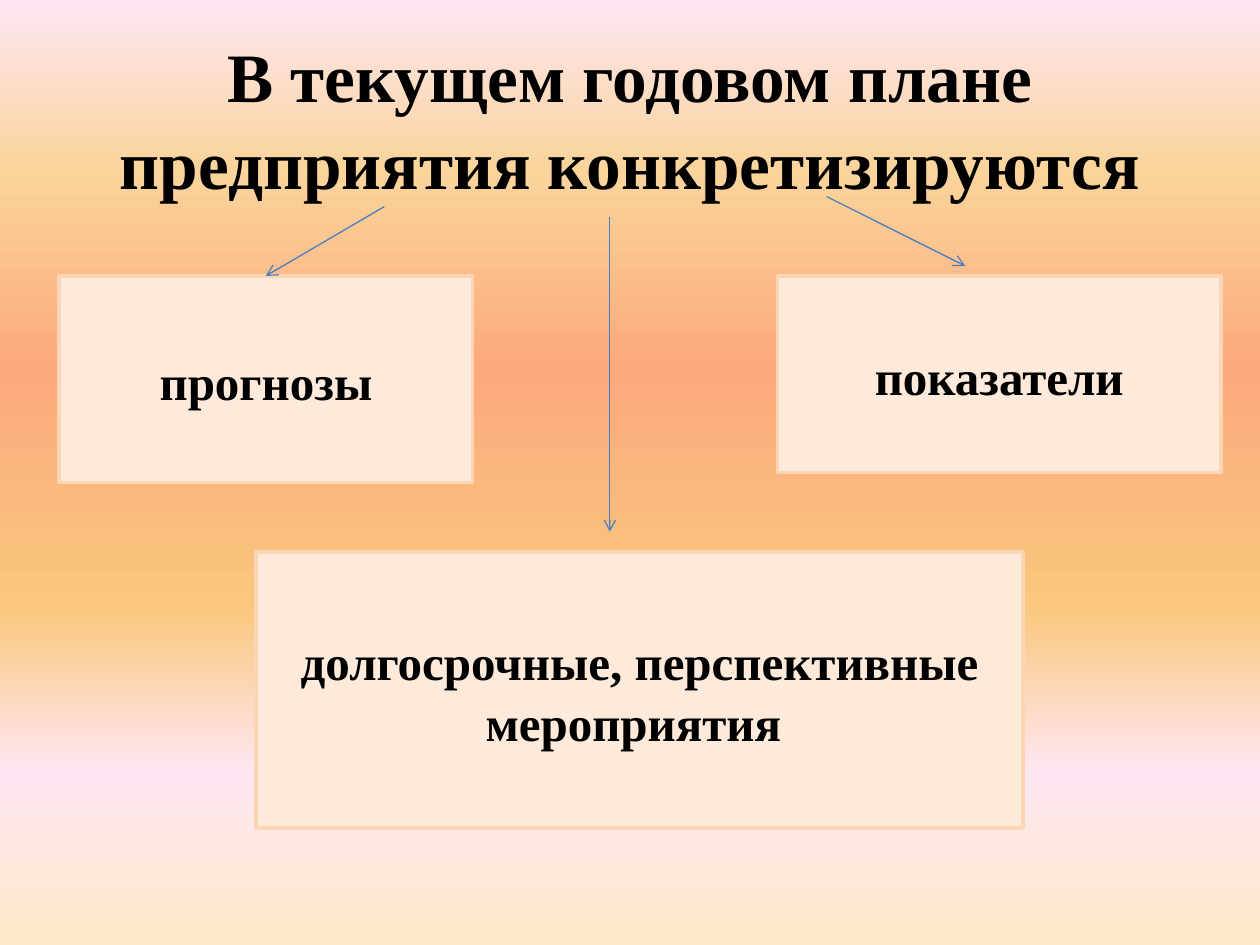
from lxml.etree import SubElement
from pptx import Presentation
from pptx.dml.color import RGBColor
from pptx.enum.dml import MSO_FILL
from pptx.enum.shapes import MSO_CONNECTOR, MSO_SHAPE
from pptx.enum.text import MSO_ANCHOR, PP_ALIGN
from pptx.oxml.ns import qn
from pptx.util import Inches, Pt

FONT = "Times New Roman"
BLACK = RGBColor(0x00, 0x00, 0x00)
BOX_FILL = RGBColor(0xFD, 0xEA, 0xDA)
BOX_LINE = RGBColor(0xFC, 0xD5, 0xB5)
ARROW_COLOUR = RGBColor(0x4B, 0x7E, 0xBC)

# Position in percent from the bottom edge, colour
BACKGROUND_STOPS = [
    (0, "FBEAC7"), (18, "FEE7F2"), (36, "FAC77D"),
    (61, "FBA97D"), (82, "FBD49C"), (100, "FEE7F2"),
]

TITLE = "В текущем годовом плане предприятия конкретизируются"
TITLE_AREA = (0.5, 0.3, 9, 1.25)

# Text, (left, top, width, height)
BOXES = [
    ("прогнозы", (0.47, 2.19, 3.28, 1.64)),
    ("долгосрочные, перспективные мероприятия ", (2.03, 4.38, 6.09, 2.19)),
    ("показатели", (6.17, 2.19, 3.52, 1.56)),
]

# Start, end, index of the box whose top the arrow joins
ARROWS = [
    ((3.05, 1.64), (2.11, 2.19), 0),
    ((6.56, 1.56), (7.66, 2.11), None),
    ((4.84, 1.72), (4.84, 4.22), None),
]


def paint_background(page):
    fill = page.background.fill
    fill.gradient()
    fill.gradient_angle = 90
    stop_list = page.background._cSld.find(".//" + qn("a:gsLst"))
    for stop in list(stop_list):
        stop_list.remove(stop)
    for percent, colour in BACKGROUND_STOPS:
        stop = SubElement(stop_list, qn("a:gs"), pos=str(percent * 1000))
        SubElement(stop, qn("a:srgbClr"), val=colour)


def write_text(shape, text, size):
    frame = shape.text_frame
    frame.word_wrap = True
    frame.vertical_anchor = MSO_ANCHOR.MIDDLE
    para = frame.paragraphs[0]
    para.text = text
    para.alignment = PP_ALIGN.CENTER
    para.line_spacing = 1.05
    para.font.name = FONT
    para.font.size = Pt(size)
    para.font.bold = True
    para.font.color.rgb = BLACK


def add_box(page, text, area):
    box = page.shapes.add_shape(MSO_SHAPE.RECTANGLE, *map(Inches, area))
    box.shadow.inherit = False
    box.fill.solid()
    box.fill.fore_color.rgb = BOX_FILL
    box.line.color.rgb = BOX_LINE
    box.line.width = Pt(2)
    write_text(box, text, 28)
    return box


def add_arrow(page, start, end, target):
    arrow = page.shapes.add_connector(
        MSO_CONNECTOR.STRAIGHT, *map(Inches, start + end))
    if target is not None:
        arrow.end_connect(target, 0)
    arrow.line.color.rgb = ARROW_COLOUR
    arrow.line.width = Pt(0.75)
    SubElement(arrow.line._get_or_add_ln(), qn("a:tailEnd"), type="arrow")
    SubElement(arrow._element.spPr, qn("a:effectLst"))


def main():
    deck = Presentation()
    deck.slide_width, deck.slide_height = Inches(10), Inches(7.5)
    page = deck.slides.add_slide(deck.slide_layouts[6])
    paint_background(page)

    title = page.shapes.add_textbox(*map(Inches, TITLE_AREA))
    write_text(title, TITLE, 39.6)

    boxes = [add_box(page, text, area) for text, area in BOXES]
    for start, end, index in ARROWS:
        add_arrow(page, start, end, None if index is None else boxes[index])

    deck.save("out.pptx")


if __name__ == "__main__":
    main()
